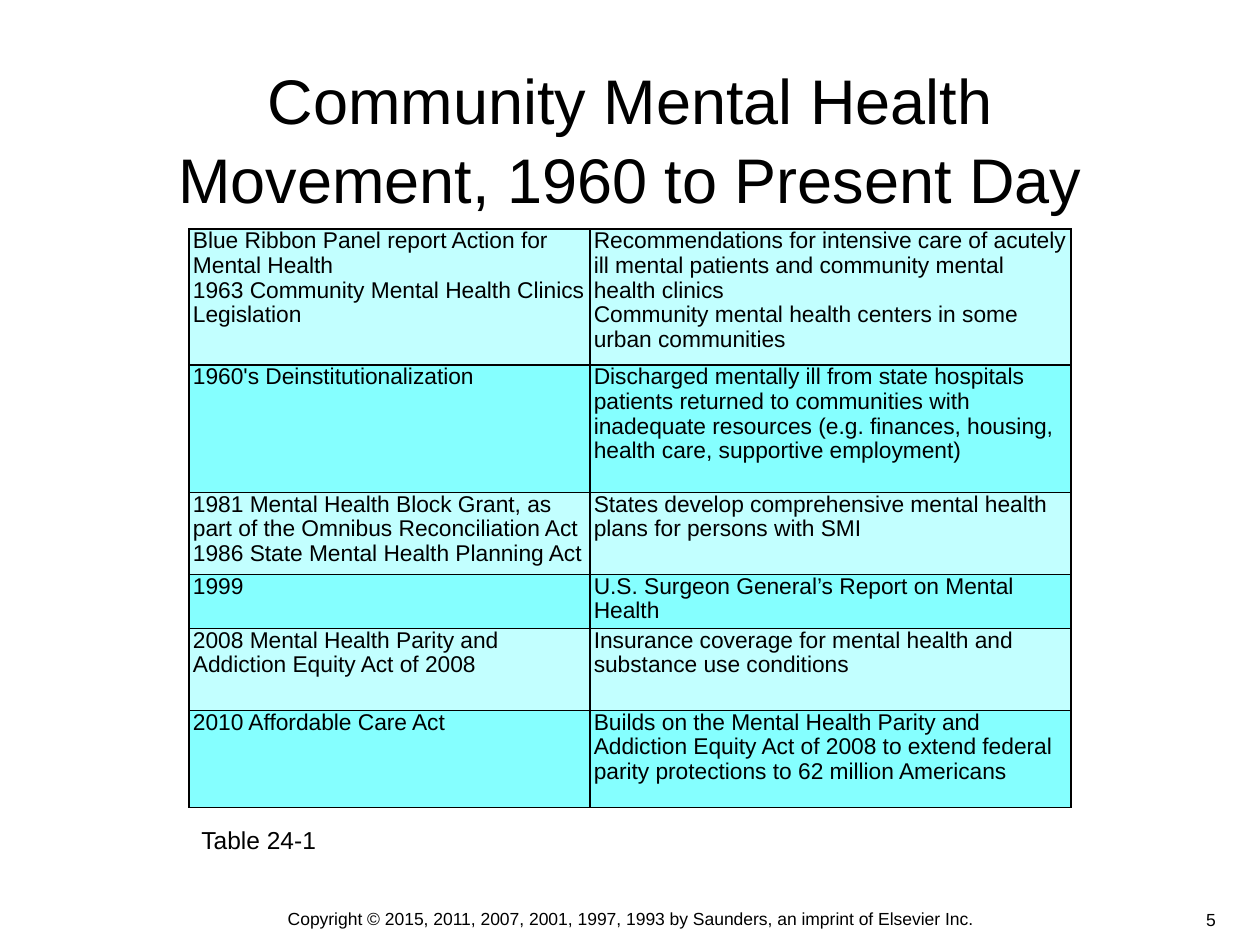
from lxml import etree
from pptx import Presentation
from pptx.dml.color import RGBColor
from pptx.enum.text import MSO_ANCHOR, PP_ALIGN
from pptx.oxml.ns import qn
from pptx.util import Cm, Pt

LEFT, CENTER, RIGHT = PP_ALIGN.LEFT, PP_ALIGN.CENTER, PP_ALIGN.RIGHT
TOP, MIDDLE = MSO_ANCHOR.TOP, MSO_ANCHOR.MIDDLE
COLORS = {"text": "000000", "border": "000000", "light": "C2FFFF", "dark": "85FFFF"}
FONT = "Arial"


def write_text(text_frame, text, size=13, align=LEFT, spacing=1.0):
    """Fill the frame with one paragraph for each line of text."""
    text_frame.word_wrap = True
    text_frame.text = text
    for paragraph in text_frame.paragraphs:
        paragraph.alignment = align
        paragraph.line_spacing = spacing
        paragraph.font.size = Pt(size)
        paragraph.font.name = FONT
        paragraph.font.color.rgb = RGBColor.from_string(COLORS["text"])


def add_cell_borders(cell, width=1):
    properties = cell._tc.get_or_add_tcPr()
    for side in ("a:lnL", "a:lnR", "a:lnT", "a:lnB"):
        line = etree.SubElement(properties, qn(side), w=str(Pt(width)))
        fill = etree.SubElement(line, qn("a:solidFill"))
        etree.SubElement(fill, qn("a:srgbClr"), val=COLORS["border"])


presentation = Presentation()
presentation.slide_width, presentation.slide_height = Cm(25.4), Cm(19.05)
slide = presentation.slides.add_slide(presentation.slide_layouts[6])

# Title, footer, slide number and table caption
text_boxes = [
    ("Community Mental Health Movement, 1960 to Present Day",
     (1.91, 1.27, 21.59, 2.97), MIDDLE, {"size": 36, "align": CENTER, "spacing": 1.05}),
    ("Copyright © 2015, 2011, 2007, 2001, 1997, 1993 by Saunders, an imprint of Elsevier Inc.",
     (3.18, 17.98, 19.05, 1.07), MIDDLE, {"size": 10, "align": CENTER}),
    ("5", (23.06, 18.03, 1.7, 1.02), MIDDLE, {"size": 10, "align": RIGHT}),
    ("Table 24-1", (3.81, 16.51, 4.24, 0.86), TOP, {"size": 14}),
]
for text, position, anchor, text_format in text_boxes:
    text_box = slide.shapes.add_textbox(*map(Cm, position))
    text_box.text_frame.vertical_anchor = anchor
    write_text(text_box.text_frame, text, **text_format)

# Timeline table: row height, event, outcome
timeline = [
    (2.74,
     "Blue Ribbon Panel report Action for Mental Health\n"
     "1963 Community Mental Health Clinics Legislation",
     "Recommendations for intensive care of acutely ill mental patients and "
     "community mental health clinics\n"
     "Community mental health centers in some urban communities"),
    (2.57,
     "1960's Deinstitutionalization",
     "Discharged mentally ill from state hospitals patients returned to communities "
     "with inadequate resources (e.g. finances, housing, health care, supportive employment)"),
    (1.65,
     "1981 Mental Health Block Grant, as part of the Omnibus Reconciliation Act\n"
     "1986 State Mental Health Planning Act",
     "States develop comprehensive mental health plans for persons with SMI"),
    (1.09,
     "1999",
     "U.S. Surgeon General’s Report on Mental Health"),
    (1.65,
     "2008 Mental Health Parity and Addiction Equity Act of 2008",
     "Insurance coverage for mental health and substance use conditions"),
    (1.96,
     "2010 Affordable Care Act",
     "Builds on the Mental Health Parity and Addiction Equity Act of 2008 to extend "
     "federal parity protections to 62 million Americans"),
]
column_widths = (8.08, 9.7)
table_height = sum(row[0] for row in timeline)
table = slide.shapes.add_table(
    len(timeline), len(column_widths),
    Cm(3.81), Cm(4.62), Cm(sum(column_widths)), Cm(table_height)).table
table.first_row = table.horz_banding = False
for column, width in zip(table.columns, column_widths):
    column.width = Cm(width)

for row_index, (height, *texts) in enumerate(timeline):
    table.rows[row_index].height = Cm(height)
    row_color = COLORS["dark" if row_index % 2 else "light"]
    for column_index, text in enumerate(texts):
        cell = table.cell(row_index, column_index)
        cell.margin_left = cell.margin_right = Cm(0.08)
        cell.margin_top = cell.margin_bottom = Cm(0)
        add_cell_borders(cell)
        cell.fill.solid()
        cell.fill.fore_color.rgb = RGBColor.from_string(row_color)
        write_text(cell.text_frame, text, spacing=0.97)

presentation.save("out.pptx")
